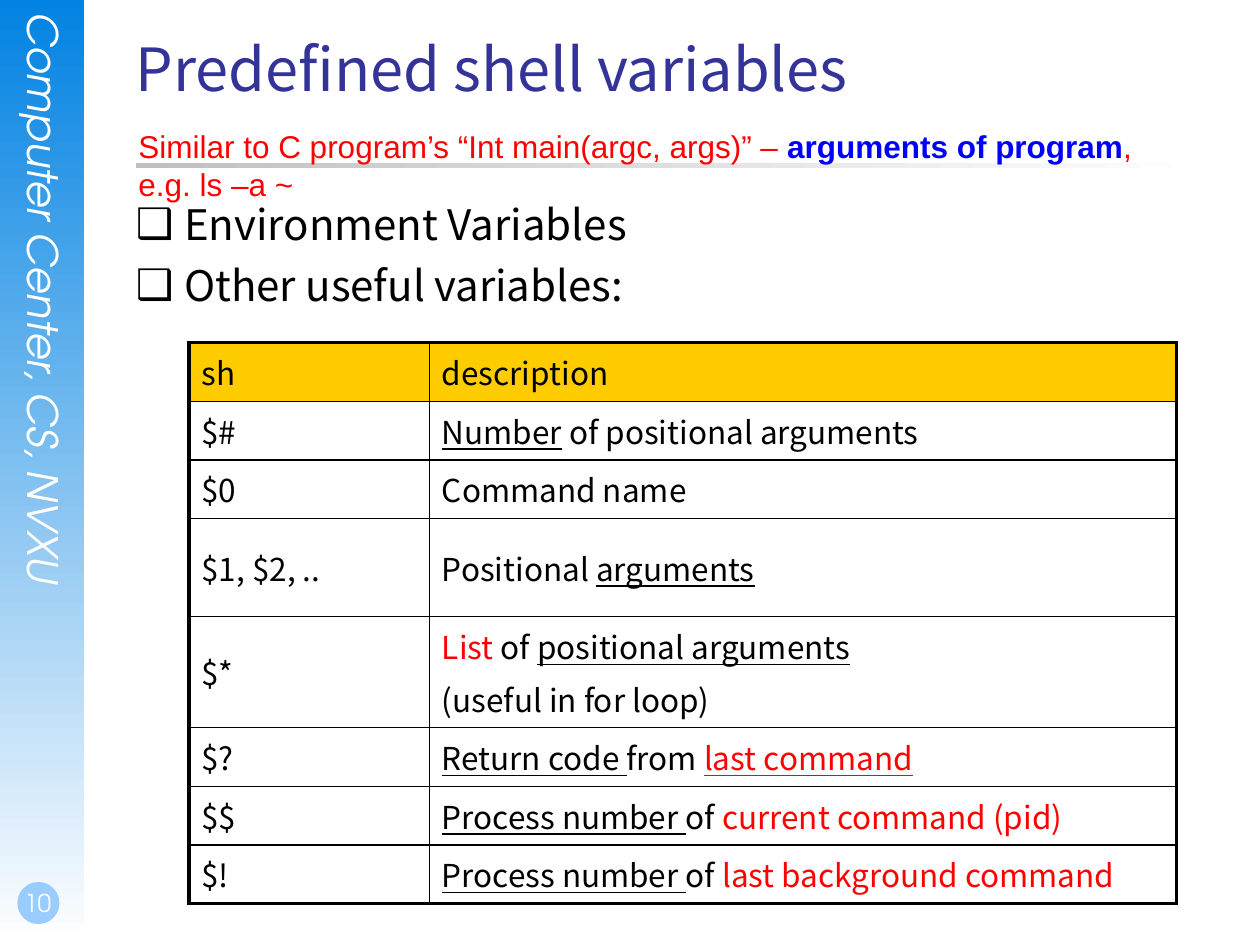
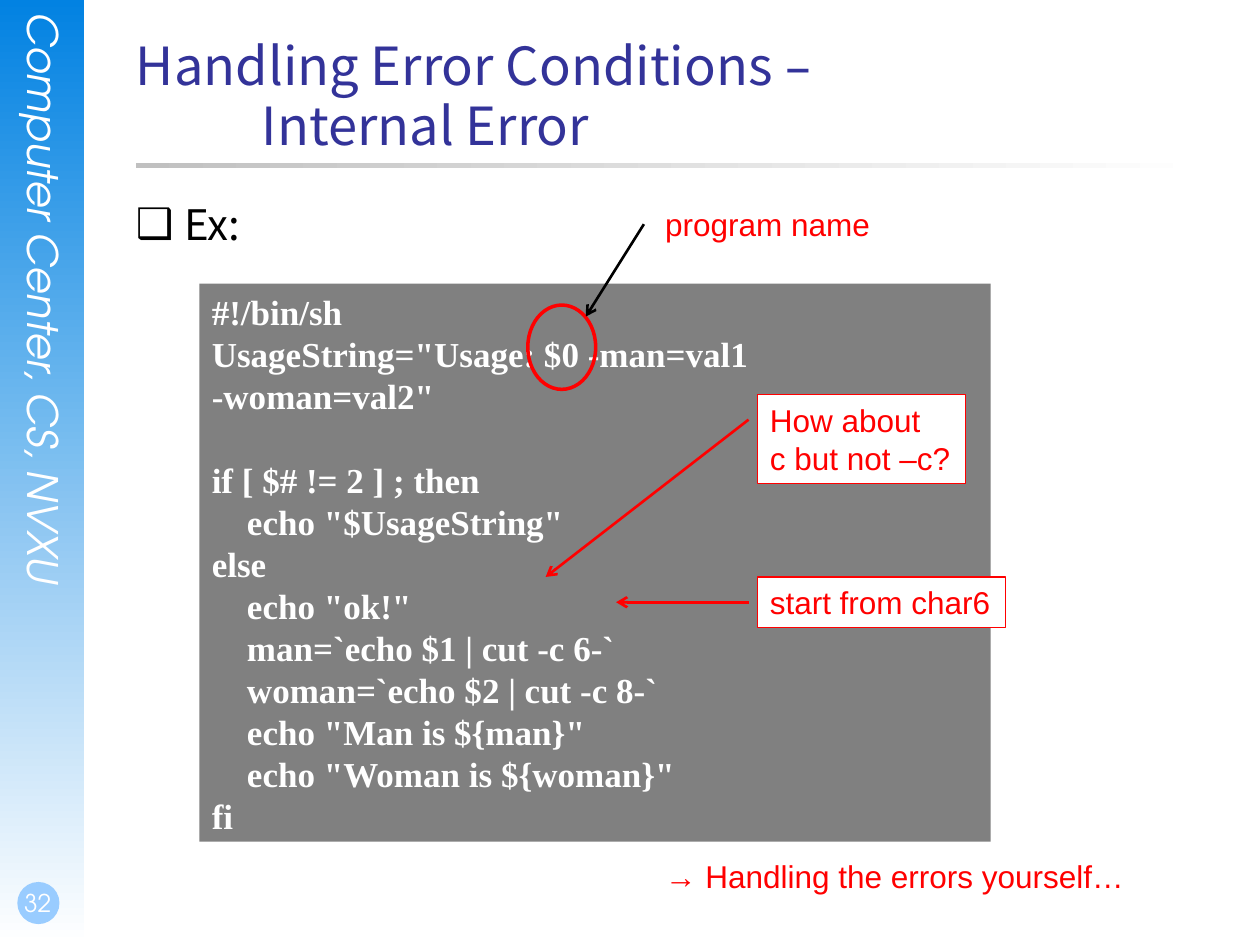
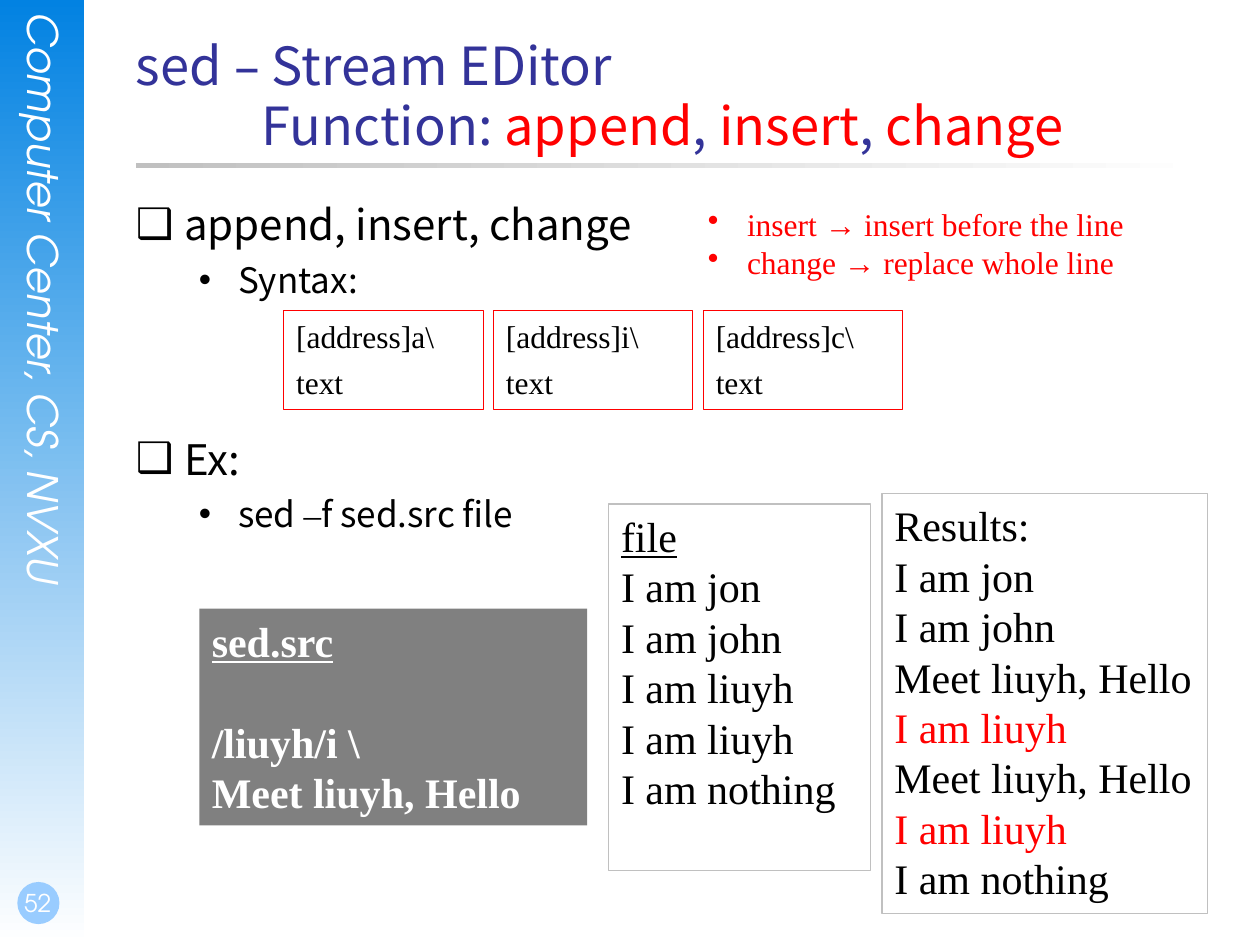
from copy import deepcopy
from dataclasses import dataclass, replace

from lxml.etree import SubElement
from pptx import Presentation
from pptx.dml.color import RGBColor
from pptx.enum.shapes import MSO_CONNECTOR as Connector, MSO_SHAPE as Preset
from pptx.enum.text import MSO_ANCHOR as Anchor, MSO_AUTO_SIZE as AutoSize, PP_ALIGN as Align
from pptx.oxml.ns import qn
from pptx.util import Cm, Pt

COLORS = {
    "band": "0282E2", "badge": "99CCFF", "rule": "C0C0C0", "title": "333399",
    "header": "FFCC00", "code": "808080", "red": "FF0000", "blue": "0000FF",
    "black": "000000", "white": "FFFFFF",
}
SANS, SERIF, LABEL, BRAND, DASH = (
    "Noto Sans CJK SC", "Times New Roman", "Arial", "TeX Gyre Adventor", "DejaVu Sans")
CONTENT_LEFT, CONTENT_WIDTH = 2.74, 21.59
INSETS = (0.25, 0.13, 0.25, 0.13)
NO_INSETS = (0, 0, 0, 0)


@dataclass(frozen=True)
class Style:
    """Character style of a text."""
    font: str
    size: float
    color: str = "black"
    bold: bool = False
    italic: bool = False
    underline: bool = False


MARKS = {
    "red": {"color": "red"}, "blue": {"color": "blue"}, "bold": {"bold": True},
    "under": {"underline": True}, "serif": {"font": SERIF}, "dash": {"font": DASH},
}
TITLE = Style(SANS, 30, "title")
BODY = Style(SANS, 24)
CELL = Style(SANS, 18)
NOTE = Style(LABEL, 18, "red")
SERIF_NOTE = Style(SERIF, 18)
LISTING = Style(SERIF, 24)
CODE = Style(SERIF, 20, "white", bold=True)


def rgb(name):
    """Return the named colour."""
    return RGBColor.from_string(COLORS[name])


def cm(box):
    """Turn a box in centimetres into lengths."""
    return [Cm(value) for value in box]


def format_span(span, style):
    """Apply a character style to a run."""
    font = span.font
    font.name, font.size = style.font, Pt(style.size)
    font.bold, font.italic, font.underline = style.bold, style.italic, style.underline
    font.color.rgb = rgb(style.color)


def fill_para(para, spans, style):
    """Add marked spans to a paragraph; a newline makes a line break."""
    for item in [spans] if isinstance(spans, str) else spans:
        text, marks = (item, "") if isinstance(item, str) else item
        if text == "\n":
            para.add_line_break()
            para._p[-1].append(deepcopy(span._r.rPr))
            continue
        span = para.add_run()
        span.text = text
        changes = {}
        for mark in marks.split():
            changes.update(MARKS[mark])
        format_span(span, replace(style, **changes))


def write(frame, lines, style, insets=INSETS, wrap=True, anchor=Anchor.TOP,
          align=Align.LEFT, spacing=1.0, before=0):
    """Fill a text frame with one paragraph per line."""
    frame.auto_size, frame.word_wrap, frame.vertical_anchor = AutoSize.NONE, wrap, anchor
    (frame.margin_left, frame.margin_top,
     frame.margin_right, frame.margin_bottom) = cm(insets)
    for index, spans in enumerate(lines):
        para = frame.add_paragraph() if index else frame.paragraphs[0]
        fill_para(para, spans, style)
        para.alignment, para.line_spacing, para.space_before = align, spacing, Pt(before)
    return frame


def set_bullet(para, symbol, left, hang):
    """Give a paragraph a bullet with a hanging indent."""
    props = para._p.get_or_add_pPr()
    props.set("marL", str(Cm(left)))
    props.set("indent", str(-Cm(hang)))
    SubElement(props, qn("a:buChar")).set("char", symbol)


def set_tab(para, position):
    """Give a paragraph one left tab stop."""
    stops = SubElement(para._p.get_or_add_pPr(), qn("a:tabLst"))
    stop = SubElement(stops, qn("a:tab"))
    stop.set("pos", str(Cm(position)))
    stop.set("algn", "l")


def add_panel(page, box, fill=None, line=None, width=0.75, preset=Preset.RECTANGLE):
    """Add a plain shape with an optional fill and outline."""
    panel = page.shapes.add_shape(preset, *cm(box))
    panel.shadow.inherit = False
    if fill:
        panel.fill.solid()
        panel.fill.fore_color.rgb = rgb(fill)
    else:
        panel.fill.background()
    if line:
        panel.line.color.rgb = rgb(line)
        panel.line.width = Pt(width)
    else:
        panel.line.fill.background()
    return panel


def add_fade(page, box, color, angle):
    """Add a bar that fades from a colour to white."""
    bar = add_panel(page, box)
    bar.fill.gradient()
    bar.fill.gradient_angle = angle
    for stop, name in zip(bar.fill.gradient_stops, (color, "white")):
        stop.color.rgb = rgb(name)


def add_text(page, box, lines, style, **options):
    """Add a text box and return its frame."""
    return write(page.shapes.add_textbox(*cm(box)).text_frame, lines, style, **options)


def add_note(page, box, lines, style=NOTE):
    """Add a short unwrapped remark."""
    return add_text(page, box, lines, style, wrap=False)


def add_arrow(page, start, end, color):
    """Add a line with an open arrowhead at its end."""
    arrow = page.shapes.add_connector(Connector.STRAIGHT, *cm(start + end))
    arrow.line.color.rgb = rgb(color)
    arrow.line.width = Pt(1.5)
    SubElement(arrow.line._get_or_add_ln(), qn("a:tailEnd")).set("type", "arrow")
    SubElement(arrow._element.spPr, qn("a:effectLst"))


def add_frame(page, number):
    """Draw the side band, page number and title rule."""
    add_fade(page, (0, 0, 1.7, 19.05), "band", 270)
    side = add_text(page, (0.38, 0.25, 1.02, 12.98), ["Computer Center, CS, NVXU"],
                    Style(BRAND, 24, "white", italic=True), insets=NO_INSETS)
    side._txBody.bodyPr.set("vert", "eaVert")
    add_panel(page, (0.35, 17.78, 0.85, 0.85), "badge", preset=Preset.OVAL)
    add_text(page, (0, 17.35, 1.47, 1.27), [str(number)], Style(BRAND, 14, "white"),
             insets=(0.05, 0, 0, 0.13), anchor=Anchor.BOTTOM, align=Align.CENTER)
    add_fade(page, (CONTENT_LEFT, 3.28, CONTENT_WIDTH, 0.1), "rule", 0)


def add_page(deck, number, title, items, size=30):
    """Add a page with its frame, title and (level, spans) list items."""
    page = deck.slides.add_slide(deck.slide_layouts[1])
    add_frame(page, number)
    heading, body = page.shapes.title, page.placeholders[1]
    for holder, top, height in ((heading, 0.74, 3.18), (body, 4.01, 12.9)):
        holder.left, holder.top, holder.width, holder.height = cm(
            (CONTENT_LEFT, top, CONTENT_WIDTH, height))
        holder.element.getparent().append(holder.element)
    write(heading.text_frame, [title], replace(TITLE, size=size),
          insets=NO_INSETS, spacing=0.96)
    set_tab(heading.text_frame.paragraphs[0], 2.54)
    frame = write(body.text_frame, [spans for _, spans in items], BODY, insets=NO_INSETS)
    for para, (level, _) in zip(frame.paragraphs, items):
        para.level = level
        set_bullet(para, *(("•", 2.06, 0.79) if level else ("❑", 0.97, 0.97)))
        text_size = 20 if level else 24
        para.space_before = Pt(text_size / 4)
        for span in para.runs:
            span.font.size = Pt(text_size)
    return page, frame


def set_borders(cell, widths):
    """Draw black left, right, top and bottom cell borders."""
    props = cell._tc.get_or_add_tcPr()
    for side, width in zip("LRTB", widths):
        border = SubElement(props, qn(f"a:ln{side}"))
        border.set("w", str(Pt(width)))
        solid = SubElement(border, qn("a:solidFill"))
        SubElement(solid, qn("a:srgbClr")).set("val", COLORS["black"])


def add_variable_table(page, box, rows):
    """Add the table of shell variables with a heavy outer border."""
    table = page.shapes.add_table(len(rows), 2, *cm(box)).table
    table.first_row = table.horz_banding = False
    name_width = 4.85
    table.columns[0].width = Cm(name_width)
    table.columns[1].width = Cm(box[2] - name_width)
    last = len(rows) - 1
    for index, row in enumerate(rows):
        table.rows[index].height = Cm(1.98 if index in (3, 4) else 1.09)
        for column, lines in enumerate(row):
            cell = table.cell(index, column)
            outer = (column == 0, column == 1, index == 0, index == last)
            set_borders(cell, [2.25 if edge else 1 for edge in outer])
            if index:
                cell.fill.background()
            else:
                cell.fill.solid()
                cell.fill.fore_color.rgb = rgb("header")
            (cell.margin_left, cell.margin_top,
             cell.margin_right, cell.margin_bottom) = cm(INSETS)
            cell.vertical_anchor = Anchor.MIDDLE if index else Anchor.TOP
            for number, spans in enumerate(lines):
                frame = cell.text_frame
                para = frame.add_paragraph() if number else frame.paragraphs[0]
                fill_para(para, spans, CELL)
                para.space_before = Pt(4)


def build_variables(deck):
    """Build the page on predefined shell variables."""
    page, _ = add_page(deck, 10, "Predefined shell variables", [
        (0, "Environment Variables"), (0, "Other useful variables:")], size=34)
    process = ("Process number ", "under")
    add_variable_table(page, (3.81, 6.91, 19.91, 10.44), [
        (["sh"], ["description"]),
        (["$#"], [[("Number", "under"), " of positional arguments"]]),
        (["$0"], ["Command name"]),
        (["$1, $2, .."], [["Positional ", ("arguments", "under")]]),
        (["$*"], [[("List ", "red"), "of ", ("positional arguments", "under")],
                  "(useful in for loop)"]),
        (["$?"], [[("Return code ", "under"), "from ", ("last command", "red under")]]),
        (["$$"], [[process, "of ", ("current command (pid)", "red")]]),
        (["$!"], [[process, "of ", ("last background command", "red")]]),
    ])
    add_note(page, (2.54, 2.44, 20.9, 1.8), [
        ["Similar to C program’s “Int main(argc, args)” – ",
         ("arguments of program", "blue bold"), ","],
        "e.g. ls –a ~"])


def add_script(page, box):
    """Add the shell script listing."""
    lines = [
        (0, "#!/bin/sh"),
        (0, 'UsageString="Usage: $0 -man=val1 -woman=val2"'),
        (0, "if [ $# != 2 ] ; then"),
        (1, 'echo "$UsageString"'),
        (0, "else"),
        (1, 'echo "ok!"'),
        (1, "man=`echo $1 | cut -c 6-`"),
        (1, "woman=`echo $2 | cut -c 8-`"),
        (1, 'echo "Man is ${man}"'),
        (1, 'echo "Woman is ${woman}"'),
        (0, "fi"),
    ]
    panel = add_panel(page, box, "code")
    frame = write(panel.text_frame, [text for _, text in lines], CODE,
                  insets=(0.25, 0.13, 1, 0.13))
    for para, (depth, _) in zip(frame.paragraphs, lines):
        para._p.get_or_add_pPr().set("marL", str(Cm(0.71 * depth)))
    frame.paragraphs[2].space_before = Pt(24)


def build_errors(deck):
    """Build the page on internal errors."""
    page, _ = add_page(deck, 32, [
        "Handling Error Conditions ", ("–", "dash"), "\n", "\tInternal Error"], [(0, "Ex:")])
    add_script(page, (4.02, 5.72, 15.95, 11.25))
    add_panel(page, (10.64, 6.15, 1.37, 1.7), line="red", width=2, preset=Preset.OVAL)
    add_arrow(page, (12.98, 4.52), (11.81, 6.38), "black")
    add_note(page, (13.16, 4.01, 4.67, 1.02), ["program name"])
    callouts = [
        ((15.27, 11.63, 5, 1.02), ["start from char6"], (15.09, 12.14), (12.42, 12.14)),
        ((15.27, 7.95, 4.19, 1.8), [["How about", "\n", "c but not –c?"]],
         (15.09, 8.46), (11, 11.63)),
    ]
    for box, lines, start, end in callouts:
        add_arrow(page, start, end, "red")
        panel = add_panel(page, box, "white", "red")
        write(panel.text_frame, lines, NOTE, wrap=False)
    add_note(page, (13.16, 17.15, 9.83, 1.02), ["→ Handling the errors yourself…"])


def add_syntax_row(page, box, gap):
    """Add equal syntax boxes for the three commands."""
    left, top, width, height = box
    for index, command in enumerate("aic"):
        panel = add_panel(page, (left + index * (width + gap), top, width, height),
                          line="red", width=0.5)
        write(panel.text_frame, [f"[address]{command}\\", "text"], SERIF_NOTE, before=4.5)


def build_sed(deck):
    """Build the page on the sed editing functions."""
    page, body = add_page(deck, 52, [
        "sed ", ("–", "dash"), " Stream EDitor ", "\n", "\tFunction: ",
        ("append", "red"), ", ", ("insert", "red"), ", ", ("change", "red"),
    ], [
        (0, "append, insert, change"), (1, "Syntax:"), (0, "Ex:"),
        (1, ["sed ", ("–", "serif"), "f sed.src file"]),
    ])
    body.paragraphs[2].space_before = Pt(76)
    source = add_panel(page, (4.02, 12.27, 7.82, 4.37), "code")
    frame = write(source.text_frame,
                  [[("sed.src", "under")], "/liuyh/i \\", "Meet liuyh, Hello"],
                  replace(CODE, size=24))
    frame.paragraphs[1].space_before = Pt(29)
    john, liuyh, nothing = ["I am jon", "I am john"], "I am liuyh", "I am nothing"
    change = ["Meet liuyh, Hello", [(liuyh, "red")]]
    listings = [
        ((12.27, 10.16, 5.28, 7.39), [[("file", "under")], *john, liuyh, liuyh, nothing], True),
        ((17.78, 9.95, 6.56, 8.47), ["Results:", *john, *change, *change, nothing], False),
    ]
    for box, lines, wrap in listings:
        panel = add_panel(page, box, line="rule")
        write(panel.text_frame, lines, LISTING, wrap=wrap)
    add_syntax_row(page, (5.72, 6.26, 4.02, 1.99), 0.21)
    hints = add_note(page, (14.02, 4.01, 8.97, 1.8), [
        "insert → insert before the line", "change → replace whole line"],
        replace(SERIF_NOTE, color="red"))
    for para in hints.paragraphs:
        set_bullet(para, "•", 0.79, 0.79)


def main():
    """Build and save the deck."""
    deck = Presentation()
    deck.slide_width, deck.slide_height = Cm(25.4), Cm(19.05)
    build_variables(deck)
    build_errors(deck)
    build_sed(deck)
    deck.save("out.pptx")


if __name__ == "__main__":
    main()
